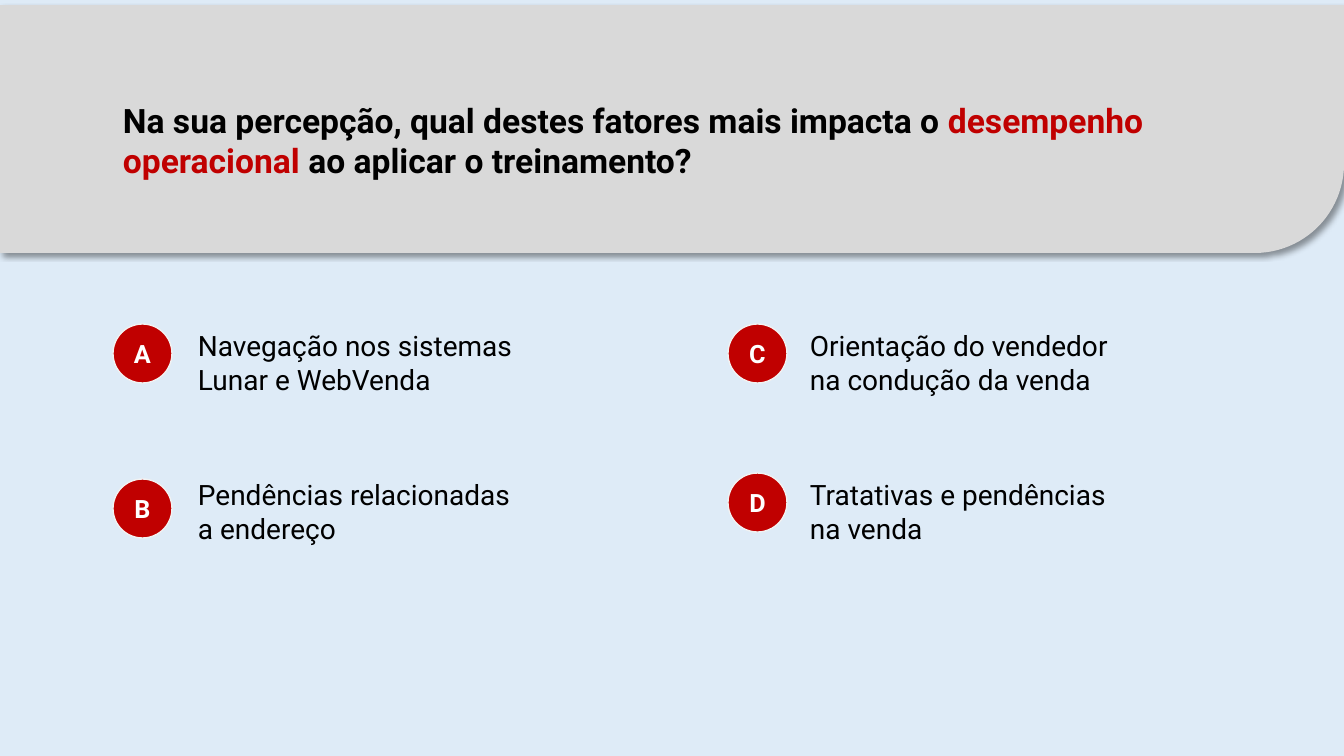
from lxml import etree
from pptx import Presentation
from pptx.dml.color import RGBColor
from pptx.enum.shapes import MSO_SHAPE
from pptx.enum.text import MSO_ANCHOR, MSO_AUTO_SIZE, PP_ALIGN
from pptx.oxml.ns import qn
from pptx.util import Pt

ROUND_ONE, OVAL = MSO_SHAPE.ROUND_1_RECTANGLE, MSO_SHAPE.OVAL
MIDDLE, CENTER = MSO_ANCHOR.MIDDLE, PP_ALIGN.CENTER
GROW = MSO_AUTO_SIZE.SHAPE_TO_FIT_TEXT
SLIDE_W, SLIDE_H = 1344, 756
SCALE = 12192000 / SLIDE_W

THEME = {
    "font": "Roboto",
    "background": RGBColor.from_string("DEEBF7"),
    "band": RGBColor.from_string("D9D9D9"),
    "accent": RGBColor.from_string("C00000"),
    "outline": RGBColor.from_string("F2F2F2"),
    "text": RGBColor.from_string("000000"),
    "letter": RGBColor.from_string("FFFFFF"),
    "question_size": Pt(24),
    "option_size": Pt(20),
    "letter_size": Pt(18),
}


def box(*lengths):
    return [round(length * SCALE) for length in lengths]


def style(r, size, color, bold=False):
    r.font.name = THEME["font"]
    r.font.size = THEME[size]
    r.font.color.rgb = THEME[color]
    r.font.bold = bold


prs = Presentation()
prs.slide_width, prs.slide_height = box(SLIDE_W, SLIDE_H)
s = prs.slides.add_slide(prs.slide_layouts[6])
s.background.fill.solid()
s.background.fill.fore_color.rgb = THEME["background"]

# Header band, turned so that its round corner is at the bottom right
band = s.shapes.add_shape(ROUND_ONE, *box(0, 5, SLIDE_W, 248))
band.adjustments[0] = 0.36
band.rotation = 180
band._element.spPr.find(qn("a:xfrm")).set("flipH", "1")
band.fill.solid()
band.fill.fore_color.rgb = THEME["band"]
band.line.fill.background()

# Soft shadow below the band
band.shadow.inherit = False
effects = band._element.spPr.find(qn("a:effectLst"))
shadow = etree.SubElement(effects, qn("a:outerShdw"), blurRad=str(Pt(4)),
                          dist=str(Pt(3)), dir="2700000", algn="tl", rotWithShape="0")
shade = etree.SubElement(shadow, qn("a:srgbClr"), val=str(THEME["text"]))
etree.SubElement(shade, qn("a:alpha"), val="40000")

# Question
question = s.shapes.add_textbox(*box(113, 95, 1059, 92))
tf = question.text_frame
tf.word_wrap = True
tf.auto_size = GROW
for text, color in [
    ("Na sua percepção, qual destes fatores mais impacta o ", "text"),
    ("desempenho operacional ", "accent"),
    ("ao aplicar o treinamento?", "text"),
]:
    r = tf.paragraphs[0].add_run()
    r.text = text
    style(r, "question_size", color, bold=True)

# Answer options: letter, text, badge x, badge y, text x, text y, text width
OPTIONS = [
    ("A", "Navegação nos sistemas Lunar e WebVenda", 113, 324, 188, 324, 351),
    ("B", "Pendências relacionadas a endereço", 113, 479, 188, 473, 341),
    ("C", "Orientação do vendedor na condução da venda", 728, 324, 800, 324, 323),
    ("D", "Tratativas e pendências na venda", 728, 473, 800, 473, 323),
]
BADGE, OPTION_H = 59, 78
for letter, text, badge_x, badge_y, text_x, text_y, text_w in OPTIONS:
    option = s.shapes.add_textbox(*box(text_x, text_y, text_w, OPTION_H))
    tf = option.text_frame
    tf.word_wrap = True
    tf.auto_size = GROW
    tf.text = text
    style(tf.paragraphs[0].runs[0], "option_size", "text")

    badge = s.shapes.add_shape(OVAL, *box(badge_x, badge_y, BADGE, BADGE))
    badge.shadow.inherit = False
    badge.fill.solid()
    badge.fill.fore_color.rgb = THEME["accent"]
    badge.line.color.rgb = THEME["outline"]
    badge.line.width = Pt(1)
    tf = badge.text_frame
    tf.vertical_anchor = MIDDLE
    tf.text = letter
    p = tf.paragraphs[0]
    p.alignment = CENTER
    style(p.runs[0], "letter_size", "letter", bold=True)

prs.save("out.pptx")
